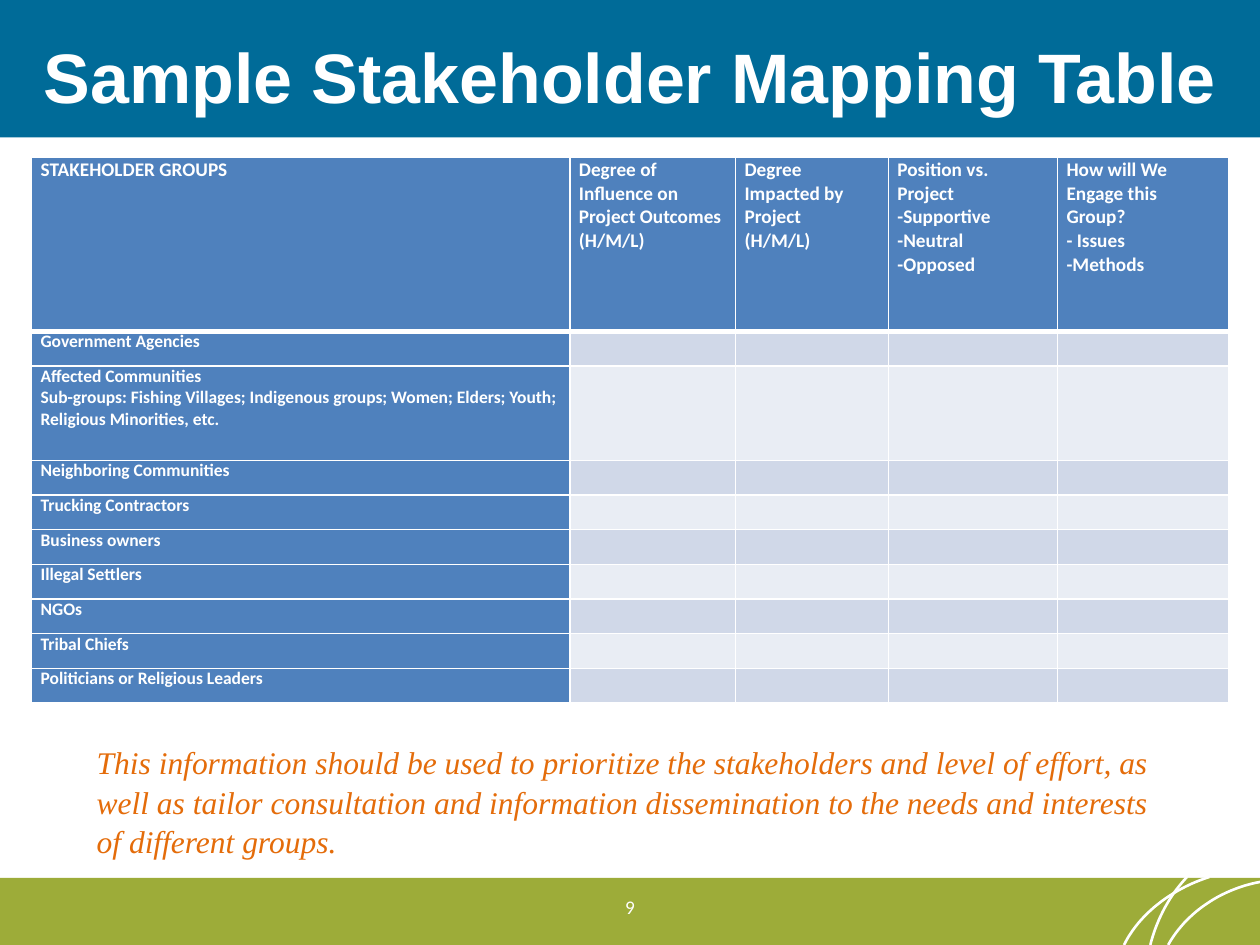
from dataclasses import dataclass

from lxml.etree import SubElement as Sub
from pptx import Presentation
from pptx.dml.color import RGBColor as Rgb
from pptx.enum.shapes import MSO_SHAPE as Kind
from pptx.enum.text import MSO_ANCHOR as Anchor, PP_ALIGN as Align
from pptx.oxml.ns import qn
from pptx.util import Cm, Pt

HUES = {
    "white": "FFFFFF", "blue": "006B98", "green": "9DAC39", "head": "4F81BD",
    "dark": "D0D8E8", "light": "E9EDF4", "orange": "E46C0A",
}
WIDE, HIGH = 25.4, 19.05


@dataclass(frozen=True)
class Style:
    font: str
    size: float
    hue: str = "white"
    bold: bool = False
    italic: bool = False


@dataclass(frozen=True)
class Band:
    top: float
    high: float
    hue: str


@dataclass(frozen=True)
class Label:
    text: str
    box: tuple
    style: Style
    align: Align = Align.LEFT
    anchor: Anchor = Anchor.TOP
    inset: float = 0.13
    pitch: float = 1.0


HEAD = Style("Calibri", 11, bold=True)
BODY = Style("Calibri", 10, bold=True)

BANDS = [Band(17.7, 1.35, "green"), Band(0, 2.77, "blue")]

ARCS = [
    ((24.38, 17.68), (23.6, 17.93), (22.96, 18.44), (22.66, HIGH)),
    ((WIDE, 17.78), (24.59, 17.93), (23.9, 18.42), (23.55, HIGH)),
    ((23.93, 17.68), (23.57, 18.06), (23.32, 18.54), (23.19, HIGH)),
]

LABELS = [
    Label("9", (10.08, 17.88, 5.24, 0.79), Style("Calibri", 11),
          Align.CENTER, Anchor.MIDDLE),
    Label("Sample Stakeholder Mapping Table", (0, 0.43, WIDE, 2.34),
          Style("Arial", 40, bold=True), Align.CENTER, inset=0.25),
    Label("This information should be used to prioritize the stakeholders and "
          "level of effort, as well as tailor consultation and information "
          "dissemination to the needs and interests of different groups.",
          (1.7, 14.81, 21.8, 2.57),
          Style("Times New Roman", 18, "orange", italic=True), pitch=1.05),
]

COLS = [10.85, 3.34, 3.08, 3.41, 3.45]
TITLES = [
    ["STAKEHOLDER GROUPS"],
    ["Degree of Influence on Project Outcomes", "(H/M/L)"],
    ["Degree Impacted by Project", "(H/M/L)"],
    ["Position vs. Project", "-Supportive\n-Neutral", "-Opposed"],
    ["How will We Engage this Group?", "- Issues", "-Methods"],
]
GROUPS = [
    ["Government Agencies"],
    ["Affected Communities",
     "Sub-groups: Fishing Villages; Indigenous groups; Women; Elders; Youth; "
     "Religious Minorities, etc."],
    ["Neighboring Communities"],
    ["Trucking Contractors"],
    ["Business owners"],
    ["Illegal Settlers"],
    ["NGOs"],
    ["Tribal Chiefs"],
    ["Politicians or Religious Leaders"],
]


def color(hue: str) -> Rgb:
    """Look up a named colour."""
    return Rgb.from_string(HUES[hue])


def write(para, text: str, style: Style) -> None:
    """Add styled runs, with a line break between lines."""
    for num, line in enumerate(text.split("\n")):
        if num:
            para.add_line_break()
        run = para.add_run()
        run.text = line
        font = run.font
        font.name, font.size = style.font, Pt(style.size)
        font.bold, font.italic = style.bold, style.italic
        font.color.rgb = color(style.hue)


def draw_band(shapes, band: Band) -> None:
    """Draw a band across the slide."""
    rect = shapes.add_shape(Kind.RECTANGLE, 0, Cm(band.top), Cm(WIDE), Cm(band.high))
    rect.shadow.inherit = False
    rect.fill.solid()
    rect.fill.fore_color.rgb = color(band.hue)
    rect.line.fill.background()


def draw_arc(shapes, knots: tuple, steps: int = 24) -> None:
    """Draw a cubic curve through its control points."""
    spots = []
    for step in range(steps + 1):
        t = step / steps
        parts = ((1 - t) ** 3, 3 * t * (1 - t) ** 2, 3 * t * t * (1 - t), t ** 3)
        spots.append(tuple(Cm(sum(w * k[axis] for w, k in zip(parts, knots)))
                           for axis in (0, 1)))
    pen = shapes.build_freeform(*spots[0])
    pen.add_line_segments(spots[1:], close=False)
    arc = pen.convert_to_shape()
    arc.shadow.inherit = False
    arc.fill.background()
    arc.line.color.rgb = color("white")
    arc.line.width = Pt(1.5)


def draw_label(shapes, label: Label) -> None:
    """Place a wrapped line of text."""
    frame = shapes.add_textbox(*map(Cm, label.box)).text_frame
    frame.word_wrap = True
    frame.vertical_anchor = label.anchor
    frame.margin_top = Cm(label.inset)
    para = frame.paragraphs[0]
    para.alignment, para.line_spacing = label.align, label.pitch
    write(para, label.text, label.style)


def edge(cell, side: str, width: float) -> None:
    """Add a white border to one side of a cell."""
    line = Sub(cell._tc.get_or_add_tcPr(), qn(f"a:ln{side}"), w=str(Pt(width)))
    Sub(Sub(line, qn("a:solidFill")), qn("a:srgbClr"), val=HUES["white"])


def fill_cell(cell, texts: list, style: Style, hue: str, row: int) -> None:
    """Set the borders, fill and text of a cell."""
    thick = {0: "B", 1: "T"}.get(row)
    for side in "LRTB":
        edge(cell, side, 3 if side == thick else 1)
    cell.fill.solid()
    cell.fill.fore_color.rgb = color(hue)
    cell.margin_left = cell.margin_right = Cm(0.18)
    cell.margin_top = cell.margin_bottom = 0
    frame = cell.text_frame
    for num, text in enumerate(texts):
        write(frame.add_paragraph() if num else frame.paragraphs[0], text, style)
    if not texts:
        frame.paragraphs[0]._p.get_or_add_endParaRPr().set("sz", str(style.size * 100))


def draw_table(shapes) -> None:
    """Draw the stakeholder table."""
    rows = [TITLES] + [[group] + [[]] * (len(COLS) - 1) for group in GROUPS]
    highs = [3.5] + [1.9 if len(group) > 1 else 0.7 for group in GROUPS]
    table = shapes.add_table(len(rows), len(COLS), Cm(0.64), Cm(3.18),
                             Cm(sum(COLS)), Cm(sum(highs))).table
    for col, wide in zip(table.columns, COLS):
        col.width = Cm(wide)
    for r, (row, high) in enumerate(zip(rows, highs)):
        table.rows[r].height = Cm(high)
        for c, texts in enumerate(row):
            hue = "head" if r == 0 or c == 0 else "dark" if r % 2 else "light"
            fill_cell(table.cell(r, c), texts, BODY if r else HEAD, hue, r)


def main() -> None:
    """Build and save the slide."""
    deck = Presentation()
    deck.slide_width, deck.slide_height = Cm(WIDE), Cm(HIGH)
    shapes = deck.slides.add_slide(deck.slide_layouts[6]).shapes
    for band in BANDS:
        draw_band(shapes, band)
    for knots in ARCS:
        draw_arc(shapes, knots)
    draw_table(shapes)
    for label in LABELS:
        draw_label(shapes, label)
    deck.save("out.pptx")


if __name__ == "__main__":
    main()
